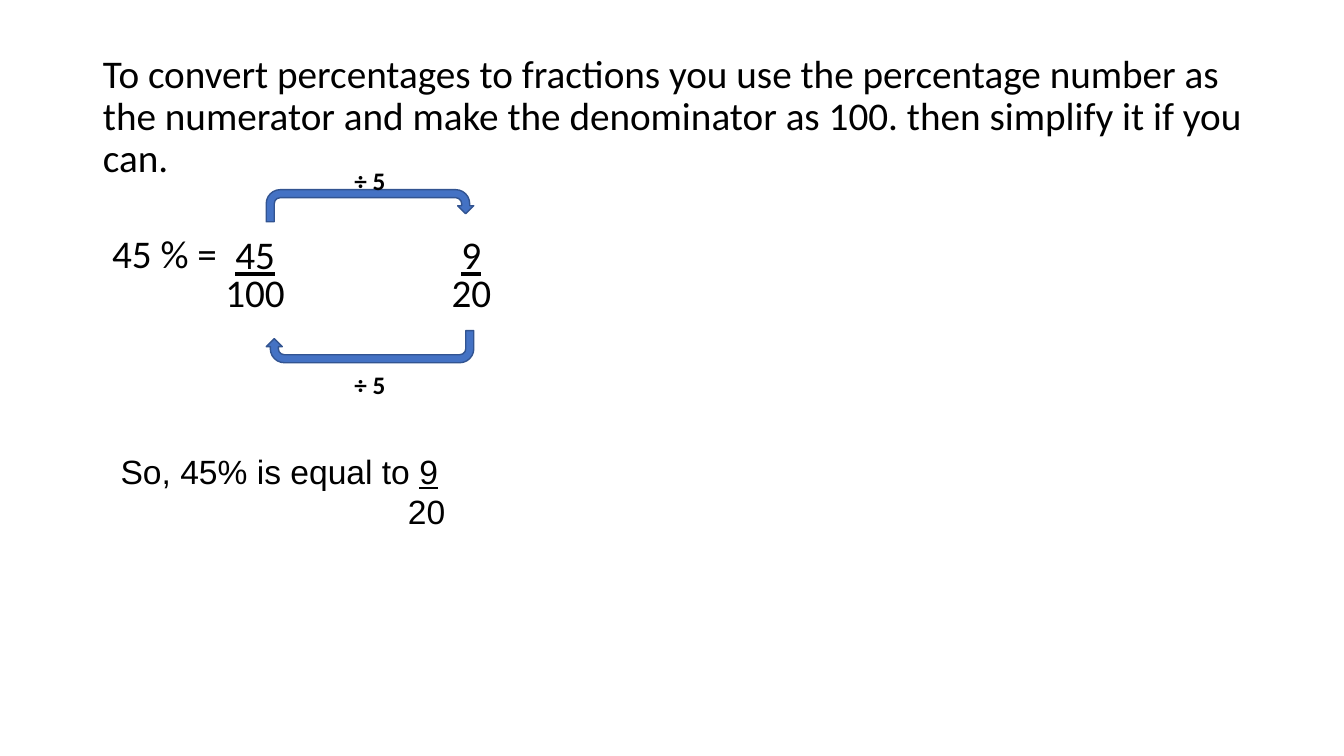
"""Build a slide that shows how to turn a percentage into a fraction."""
import dataclasses

import pptx
import pptx.dml.color
import pptx.enum.shapes
import pptx.enum.text
import pptx.oxml
import pptx.oxml.ns
import pptx.util
from pptx.util import Cm, Pt


@dataclasses.dataclass(frozen=True)
class Theme:
    body_font: str = "Calibri"
    answer_font: str = "Arial"
    ink: str = "000000"
    arrow_fill: str = "4472C4"
    arrow_line: str = "325491"
    body_size: int = 28
    answer_size: int = 24
    label_size: int = 18


THEME = Theme()
CENTER = pptx.enum.text.PP_ALIGN.CENTER

RULE = [
    {"runs": [("To convert percentages to fractions you use the percentage number as "
               "the numerator and make the denominator as 100. then simplify it if you can.", False)],
     "spacing": 0.9, "before": 10},
    {"runs": [("45 % =", False)], "spacing": 0.8, "before": 41, "indent": 0.23},
]
FRACTIONS = [
    {"numerator": "45", "denominator": "100", "center": 6.43},
    {"numerator": "9", "denominator": "20", "center": 11.88},
]
ANSWER = [
    {"runs": [("So, 45% is equal to ", False), ("9", True)]},
    {"runs": [("20", False)], "indent": 7.24},
]
STEP = [{"runs": [("÷ 5", False)], "align": CENTER}]

RULE_BOX = (2.34, 1.24, 29.21, 15.9)
ANSWER_BOX = (2.79, 11.23, 24.97, 2.31)
FRACTION_TOP, FRACTION_WIDTH, FRACTION_HEIGHT = 5.92, 2.5, 2.18
ARROW_LEFT, ARROW_WIDTH, ARROW_HEIGHT = 6.71, 5.23, 0.81
LABEL_WIDTH, LABEL_HEIGHT = 2.29, 1.02
STEPS = [
    {"arrow_top": 4.78, "rotation": 0, "label_top": 4.04},
    {"arrow_top": 8.33, "rotation": 180, "label_top": 9.19},
]


def color(value):
    return pptx.dml.color.RGBColor.from_string(value)


def set_indent(paragraph, indent):
    properties = paragraph._p.get_or_add_pPr()
    properties.set("marL", str(int(Cm(indent))))
    properties.set("indent", "0")
    namespace = pptx.oxml.ns.nsdecls("a")
    properties.append(pptx.oxml.parse_xml(f"<a:buNone {namespace}/>"))


def write(frame, lines, font, size, bold=False):
    frame.word_wrap = True
    for number, line in enumerate(lines):
        paragraph = frame.add_paragraph() if number else frame.paragraphs[0]
        paragraph.alignment = line.get("align")
        paragraph.line_spacing = line.get("spacing", 1.0)
        paragraph.space_before = Pt(line.get("before", 0))
        set_indent(paragraph, line.get("indent", 0))
        for wording, underlined in line["runs"]:
            run = paragraph.add_run()
            run.text = wording
            run.font.name = font
            run.font.size = Pt(size)
            run.font.bold = bold
            run.font.underline = underlined
            run.font.color.rgb = color(THEME.ink)


def add_text(slide, box, lines, font, size, bold=False):
    frame = slide.shapes.add_textbox(*map(Cm, box)).text_frame
    write(frame, lines, font, size, bold)
    frame.auto_size = pptx.enum.text.MSO_AUTO_SIZE.SHAPE_TO_FIT_TEXT


def add_fraction(slide, numerator, denominator, center):
    lines = [
        {"runs": [(wording, underlined)], "spacing": 0.8, "align": CENTER}
        for wording, underlined in ((numerator, True), (denominator, False))
    ]
    box = (center - FRACTION_WIDTH / 2, FRACTION_TOP, FRACTION_WIDTH, FRACTION_HEIGHT)
    add_text(slide, box, lines, THEME.body_font, THEME.body_size)


def add_arrow(slide, top, rotation):
    arrow = slide.shapes.add_shape(
        pptx.enum.shapes.MSO_SHAPE.U_TURN_ARROW,
        Cm(ARROW_LEFT), Cm(top), Cm(ARROW_WIDTH), Cm(ARROW_HEIGHT))
    arrow.rotation = rotation
    arrow.shadow.inherit = False
    arrow.fill.solid()
    arrow.fill.fore_color.rgb = color(THEME.arrow_fill)
    arrow.line.color.rgb = color(THEME.arrow_line)
    arrow.line.width = Pt(1)


def main():
    deck = pptx.Presentation()
    deck.slide_width, deck.slide_height = Cm(33.87), Cm(19.05)
    slide = deck.slides.add_slide(deck.slide_layouts[1])
    title = slide.shapes.title
    title._element.getparent().remove(title._element)

    rule = slide.placeholders[1]
    rule.left, rule.top, rule.width, rule.height = map(Cm, RULE_BOX)
    write(rule.text_frame, RULE, THEME.body_font, THEME.body_size)
    rule.text_frame.auto_size = pptx.enum.text.MSO_AUTO_SIZE.NONE

    for fraction in FRACTIONS:
        add_fraction(slide, **fraction)

    label_left = ARROW_LEFT + (ARROW_WIDTH - LABEL_WIDTH) / 2
    for step in STEPS:
        add_arrow(slide, step["arrow_top"], step["rotation"])
        label_box = (label_left, step["label_top"], LABEL_WIDTH, LABEL_HEIGHT)
        add_text(slide, label_box, STEP, THEME.body_font, THEME.label_size, bold=True)

    add_text(slide, ANSWER_BOX, ANSWER, THEME.answer_font, THEME.answer_size)
    deck.save("out.pptx")


if __name__ == "__main__":
    main()
